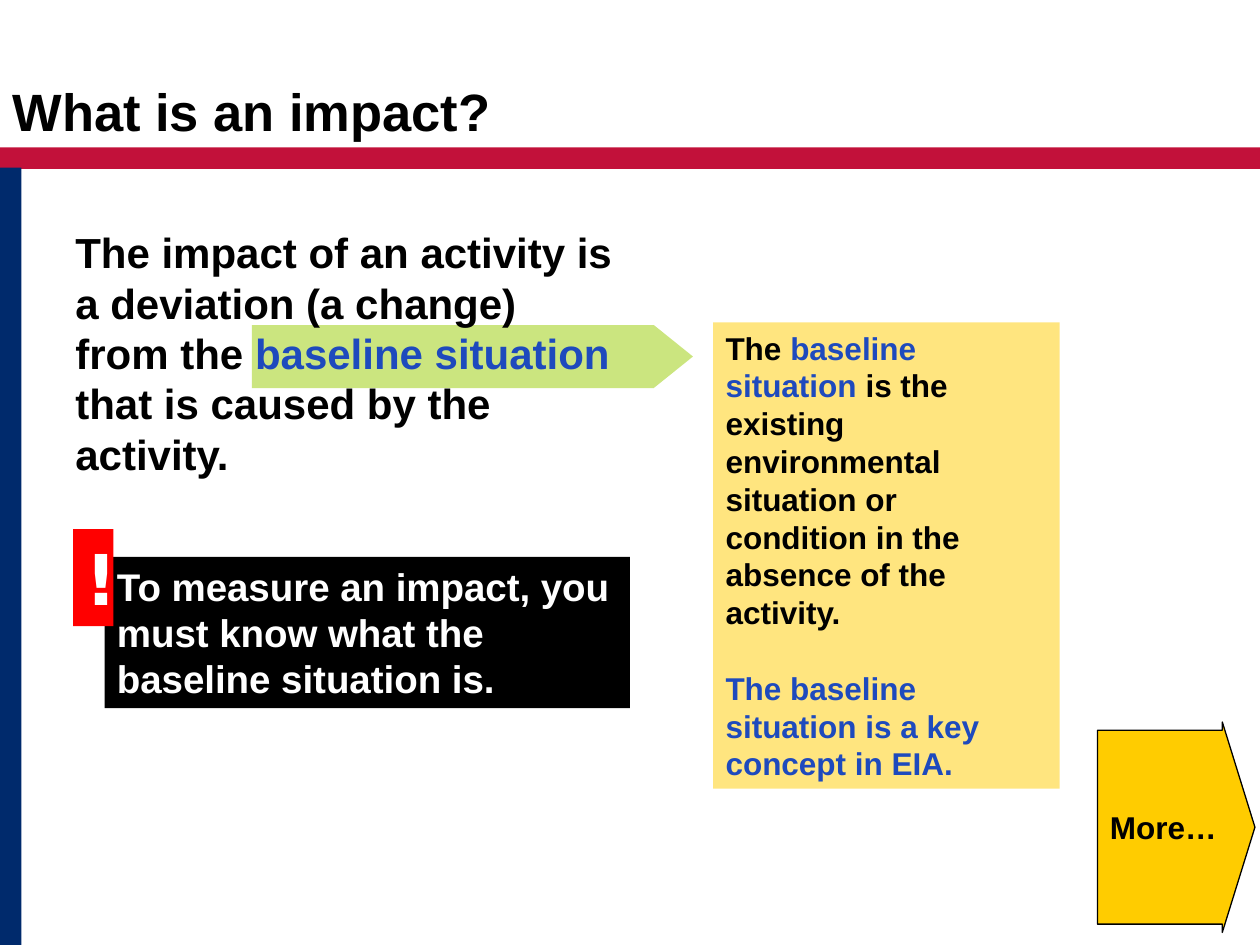
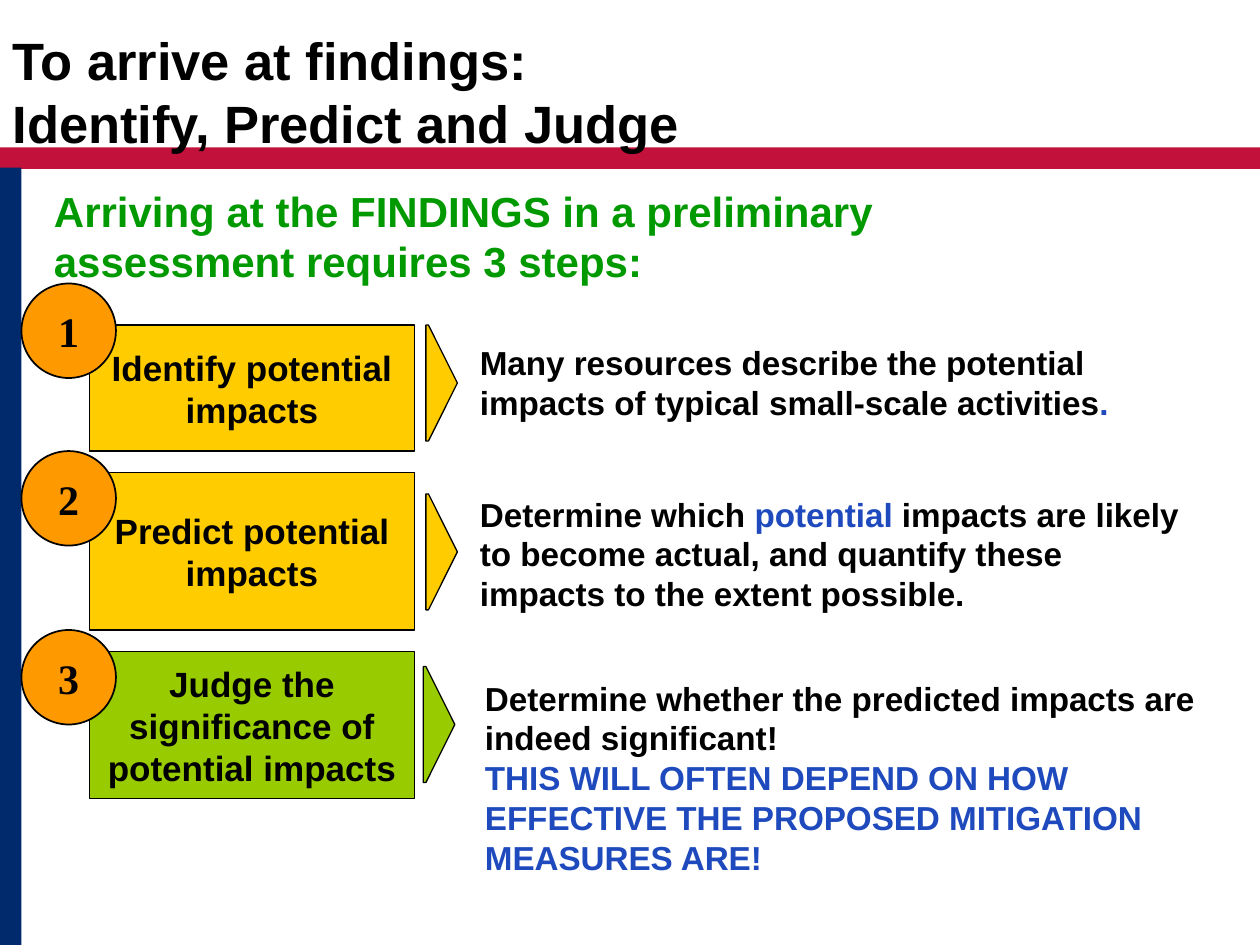
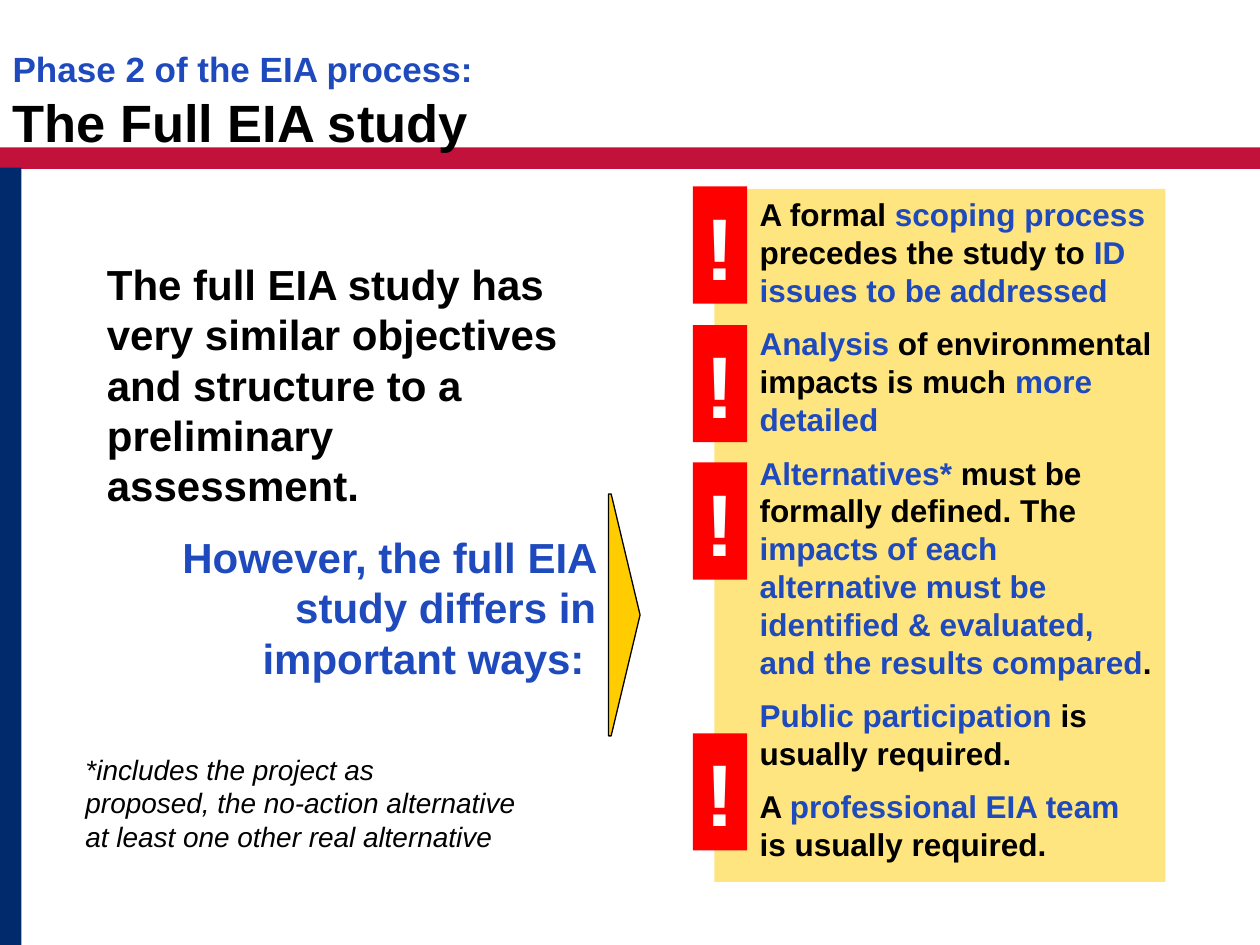
from pptx import Presentation
from pptx.dml.color import RGBColor
from pptx.enum.shapes import MSO_SHAPE
from pptx.enum.text import MSO_ANCHOR, MSO_AUTO_SIZE, PP_ALIGN
from pptx.oxml.ns import qn
from pptx.util import Inches, Pt
from lxml import etree

COLORS = {
    "band": "C2113A", "rail": "002A6C", "gold": "FFCC00", "lime": "99CC00",
    "orange": "FF9900", "alert": "FF0000", "heading": "009900",
    "accent": "1E4ABD", "black": "000000", "white": "FFFFFF",
}


def draw(slide, kind, box, fill, line=None, adjust=(), opacity=None):
    """Add a filled preset shape; line is a width in points, opacity a percentage."""
    shape = slide.shapes.add_shape(kind, *map(Inches, box))
    shape.shadow.inherit = False
    for index, value in enumerate(adjust):
        shape.adjustments[index] = value
    shape.fill.solid()
    shape.fill.fore_color.rgb = RGBColor.from_string(COLORS[fill])
    if opacity:
        color = shape.fill._xPr.find(qn("a:solidFill"))[0]
        etree.SubElement(color, qn("a:alpha"), val=str(opacity * 1000))
    if line:
        shape.line.color.rgb = RGBColor.from_string(COLORS["black"])
        shape.line.width = Pt(line)
    else:
        shape.line.fill.background()
    return shape


def write(shape, text, size, color="black", font="Arial", align=PP_ALIGN.LEFT,
          anchor=MSO_ANCHOR.TOP, wrap=True, gap=0, indent=0):
    """Fill a shape with paragraphs; parts between bars take the accent colour."""
    frame = shape.text_frame
    frame.word_wrap = wrap
    frame.auto_size = MSO_AUTO_SIZE.NONE
    frame.vertical_anchor = anchor
    for number, content in enumerate(text.split("\n")):
        paragraph = frame.add_paragraph() if number else frame.paragraphs[0]
        paragraph.alignment = align
        if number:
            paragraph.space_before = Pt(gap)
        if indent:
            properties = paragraph._p.get_or_add_pPr()
            properties.set("marL", str(Inches(indent)))
            properties.set("indent", "0")
        for part, words in enumerate(content.split("|")):
            if not words:
                continue
            paragraph.add_run().text = words
            run_font = paragraph.runs[-1].font
            run_font.name, run_font.size, run_font.bold = font, Pt(size), True
            run_font.color.rgb = RGBColor.from_string(COLORS["accent" if part % 2 else color])
    return frame


prs = Presentation()
prs.slide_width, prs.slide_height = Inches(10), Inches(7.5)
title_only = prs.slide_layouts[5]

# Slides with their titles
titles = [
    ("What is an impact?", 0.58),
    ("To arrive at findings:\vIdentify, Predict and Judge", 0.17),
    ("Phase 2 of the EIA process:\vThe Full EIA study", 0.33),
]
for heading, top in titles:
    slide = prs.slides.add_slide(title_only)
    title = slide.shapes.title
    title.left, title.top, title.width, title.height = map(Inches, (0, top, 8.5, 0.67))
    title.text_frame.text = heading
    title.text_frame.vertical_anchor = MSO_ANCHOR.TOP
    title.text_frame.auto_size = MSO_AUTO_SIZE.NONE
    title.text_frame.paragraphs[0].alignment = PP_ALIGN.LEFT
    for run in title.text_frame.paragraphs[0].runs:
        run.font.name, run.font.size, run.font.bold = "Arial", Pt(30), True
        run.font.color.rgb = RGBColor.from_string(COLORS["black"])
impact, findings, full_study = prs.slides

phase = full_study.shapes.title.text_frame.paragraphs[0].runs[0]
phase.font.size = Pt(20)
phase.font.color.rgb = RGBColor.from_string(COLORS["accent"])

# Shared bands, moved into the layout
for box, fill in [((0, 1.17, 10, 0.17), "band"), ((0, 1.33, 0.17, 6.17), "rail")]:
    band = draw(impact, MSO_SHAPE.RECTANGLE, box, fill)
    title_only.shapes._spTree.append(band._element)

# Slide 1: definition of an impact
draw(impact, MSO_SHAPE.PENTAGON, (2, 2.58, 3.5, 0.5), "lime", adjust=[0.622], opacity=50)
definition = impact.shapes.add_textbox(*map(Inches, (0.5, 1.75, 4.5, 2.17)))
write(definition, "The impact of an activity is a deviation (a change) from the "
      "|baseline situation| that is caused by the activity.", 24)

measure = draw(impact, MSO_SHAPE.RECTANGLE, (0.83, 4.42, 4.17, 1.2), "black")
write(measure, "To measure an impact, you must know what the baseline situation is.",
      22, "white")
warning = draw(impact, MSO_SHAPE.RECTANGLE, (0.58, 4.2, 0.32, 0.77), "alert")
write(warning, "!", 40, "white", "DejaVu Sans")

baseline = draw(impact, MSO_SHAPE.RECTANGLE, (5.66, 2.56, 2.75, 3.7), "gold", opacity=50)
write(baseline, "The |baseline situation| is the existing environmental situation or "
      "condition in the absence of the activity.\n"
      "|The baseline situation is a key concept in EIA.", 18, gap=21.6)

more = draw(impact, MSO_SHAPE.DOWN_ARROW, (8.5, 5.94, 1.67, 1.25), "gold", 0.75, [0.921, 0.207])
more.rotation = 270
more_frame = write(more, "More…", 18, align=PP_ALIGN.CENTER,
                   anchor=MSO_ANCHOR.MIDDLE, wrap=False)
more_frame._txBody.bodyPr.set("vert", "eaVert")

# Slide 2: three steps to the findings
intro = findings.shapes.add_textbox(*map(Inches, (0.33, 1.42, 7.33, 0.5)))
write(intro, "Arriving at the FINDINGS in a preliminary assessment requires 3 steps:",
      24, "heading")

# Step name, fill, top and height, badge top, arrow left and top, explanation and its box
steps = [
    ("Identify potential impacts", "gold", 2.58, 1, 2.25, 3.38, 2.58,
     "Many resources describe the potential impacts of typical small-scale activities|.",
     (3.71, 2.67, 5.88, 0.73)),
    ("Predict potential impacts", "gold", 3.75, 1.25, 3.58, 3.38, 3.92,
     "Determine which |potential| impacts are likely to become actual, and quantify "
     "these impacts to the extent possible.", (3.71, 3.87, 5.88, 1.05)),
    ("Judge the significance of potential impacts", "lime", 5.17, 1.17, 5, 3.36, 5.29,
     "Determine whether the predicted impacts are indeed significant!\n"
     "|THIS WILL OFTEN DEPEND ON HOW EFFECTIVE THE PROPOSED MITIGATION MEASURES ARE!",
     (3.75, 5.33, 5.88, 1.68)),
]
centered = {"align": PP_ALIGN.CENTER, "anchor": MSO_ANCHOR.MIDDLE}
for number, (name, fill, top, height, badge_top, arrow_left, arrow_top,
             explanation, box) in enumerate(steps, 1):
    step = draw(findings, MSO_SHAPE.RECTANGLE, (0.71, top, 2.58, height), fill, 0.75)
    write(step, name, 20, **centered)
    draw(findings, MSO_SHAPE.PENTAGON, (arrow_left, arrow_top, 0.25, 0.92), fill, 0.75, [0.917])
    write(findings.shapes.add_textbox(*map(Inches, box)), explanation, 19)
    badge = draw(findings, MSO_SHAPE.OVAL, (0.17, badge_top, 0.75, 0.75), "orange", 1)
    write(badge, str(number), 24, font="Times New Roman", wrap=False, **centered)

# Slide 3: how the full study differs
comparison = full_study.shapes.add_textbox(*map(Inches, (0.75, 2, 4.08, 4.25)))
comparison_frame = write(
    comparison, "The full EIA study has very similar objectives and structure to a "
    "preliminary assessment.\n"
    "|However, the full EIA study differs in important ways: ", 24, gap=12)
comparison_frame.paragraphs[1].alignment = PP_ALIGN.RIGHT
draw(full_study, MSO_SHAPE.PENTAGON, (4.83, 3.92, 0.25, 1.92), "gold", 0.75, [0.917])

differences = draw(full_study, MSO_SHAPE.RECTANGLE, (5.67, 1.5, 3.58, 5.5), "gold", opacity=50)
write(differences, "\n".join([
    "A formal |scoping process |precedes the study to| ID issues to be addressed",
    "|Analysis| of environmental impacts is much |more detailed",
    "|Alternatives*| must be formally defined. The |impacts of each alternative must be "
    "identified & evaluated, and the results compared|.",
    "|Public participation| is usually required.",
    "A |professional EIA team| is usually required.",
]), 18, gap=9, indent=0.26)

for top in (1.48, 2.58, 3.67, 5.82):
    marker = draw(full_study, MSO_SHAPE.RECTANGLE, (5.5, top, 0.43, 0.93), "alert")
    write(marker, "!", 50, "white", wrap=False)

# Footnote with fixed line breaks
footnote = full_study.shapes.add_textbox(*map(Inches, (0.58, 5.92, 3.62, 0.9)))
footnote.text_frame.word_wrap = False
footnote.text_frame.text = ("*includes the project as \vproposed, the no-action alternative\v"
                            "at least one other real alternative")
for run in footnote.text_frame.paragraphs[0].runs:
    run.font.name, run.font.size, run.font.italic = "Arial", Pt(16), True
    run.font.color.rgb = RGBColor.from_string(COLORS["black"])

prs.save("out.pptx")
